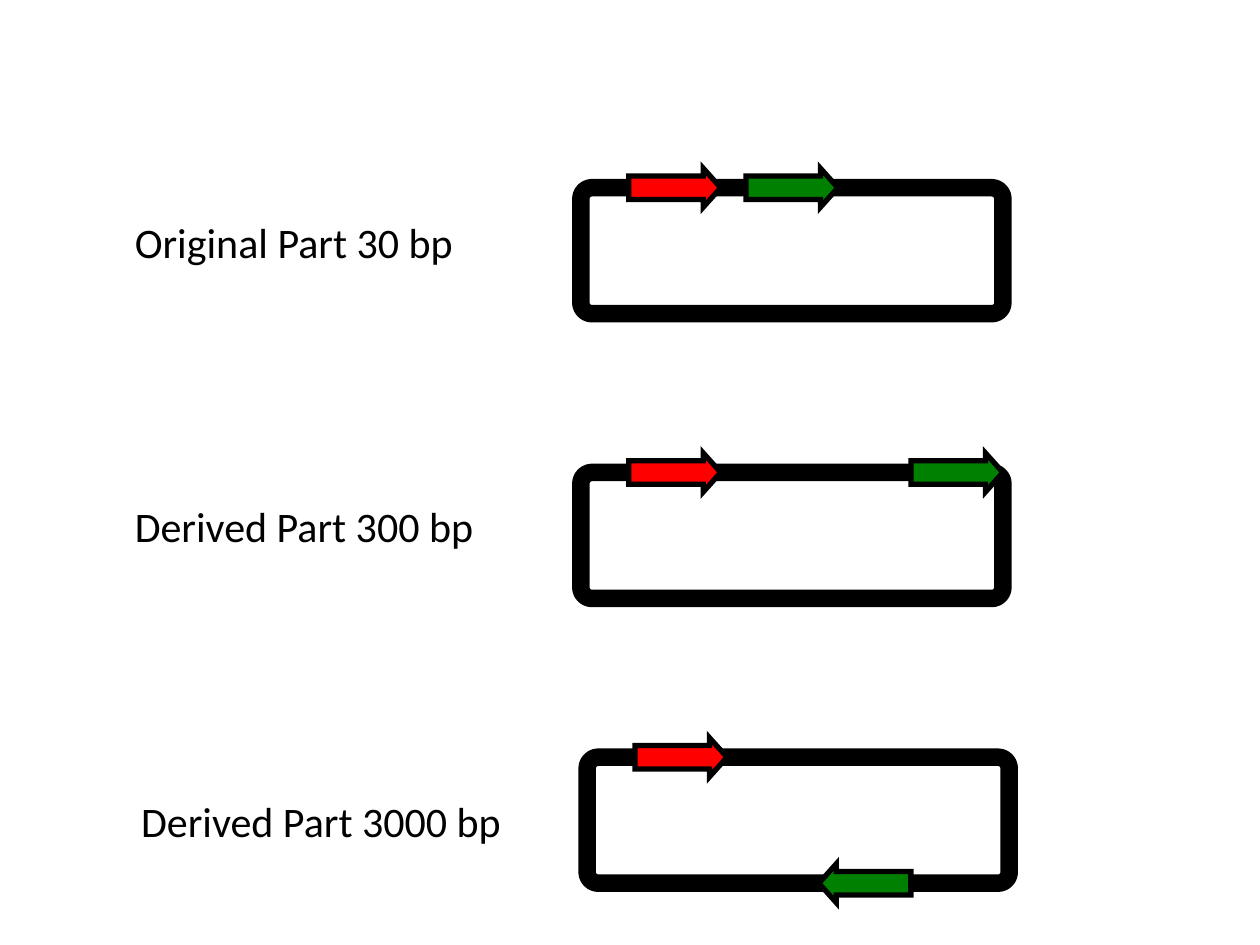
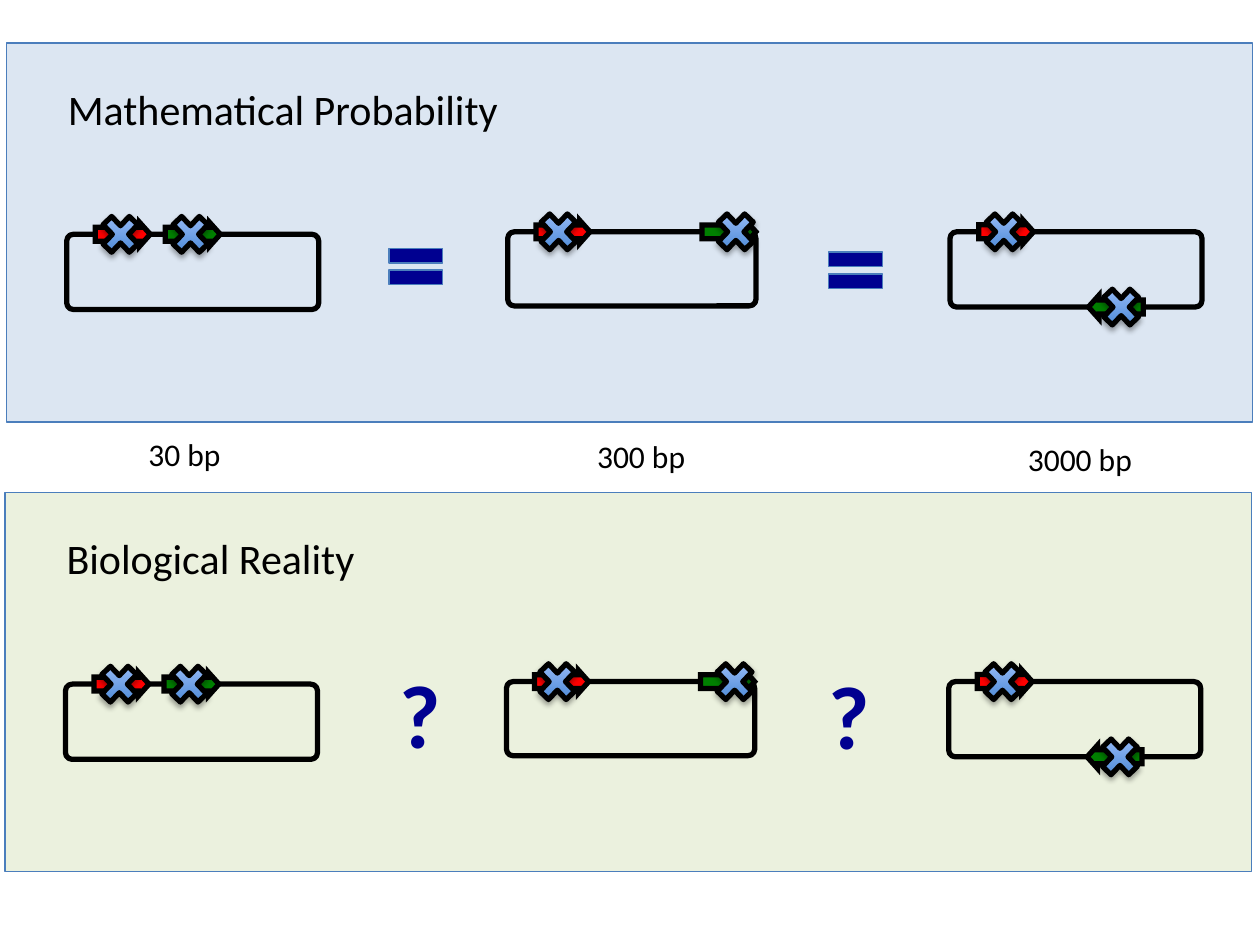
from dataclasses import dataclass

from lxml.etree import SubElement
from pptx import Presentation
from pptx.dml.color import RGBColor
from pptx.enum.shapes import MSO_SHAPE
from pptx.enum.text import MSO_ANCHOR
from pptx.oxml.ns import qn
from pptx.util import Inches, Pt


@dataclass(frozen=True)
class Theme:
    font: str = "Calibri"
    ink: str = "000000"
    red: str = "FF0000"
    green: str = "008000"
    navy: str = "000090"
    edge: str = "4B7EBC"
    mark: tuple = ("3F80CE", "A4C4FF")
    label: int = 24
    small: int = 18
    symbol: int = 51
    thin: float = 0.75
    line: int = 3
    ring: int = 10


T = Theme()
SLIDE = (10, 7.5)

# Plasmid geometry at full scale, relative to the ring's top left corner
RING = (3.35, 1)
ARROW = (0.73, 0.31)
RED_X = 0.38
MARK = (0.4, 0.42)

# Second part: x along the ring, whether it sits reversed on the lower strand
VARIANTS = {
    "30 bp": {"green_x": 1.31, "reverse": False},
    "300 bp": {"green_x": 2.62, "reverse": False},
    "3000 bp": {"green_x": 1.84, "reverse": True},
}

# Slide 1: label, variant, ring corner, label box (offset from ring, width)
PARTS = [
    ("Original Part", "30 bp", (4.61, 1.49), 0.07, 2.72),
    ("Derived Part", "300 bp", (4.61, 3.75), 0.07, 3.34),
    ("Derived Part", "3000 bp", (4.66, 6.01), 0.15, 3.34),
]
LABEL_DX, LABEL_H = -3.54, 0.71

# Slide 2: ring corner in the panel, ring width, mark shifts from both arrows
COLUMNS = [
    ("30 bp", (0.48, 1.52), 2, (0, 0)),
    ("300 bp", (3.98, 1.5), 1.97, (-0.02, 0.07)),
    ("3000 bp", (7.49, 1.5), 2, (0, 0.06)),
]
PANEL = (9.89, 3.01)
PANELS = [
    {"title": "Mathematical Probability", "at": (0.05, 0.34), "fill": "DCE6F2",
     "relation": "=", "relations": [(2.96, 1.53), (6.45, 1.56)]},
    {"title": "Biological Reality", "at": (0.04, 3.91), "fill": "EBF1DE",
     "relation": "?", "relations": [(3.03, 1.27), (6.44, 1.28)]},
]
SCALE_LABELS_X = (1.08, 4.64, 8.06)


def rgb(color):
    return RGBColor.from_string(color)


def shape(shapes, kind, x, y, size, fill=None, line=T.ink, width=T.line, adj=()):
    sp = shapes.add_shape(kind, *map(Inches, (x, y, *size)))
    sp.shadow.inherit = False
    if fill:
        sp.fill.solid()
        sp.fill.fore_color.rgb = rgb(fill)
    else:
        sp.fill.background()
    sp.line.color.rgb = rgb(line)
    sp.line.width = Pt(width)
    for i, value in enumerate(adj):
        sp.adjustments[i] = value
    return sp


def text(shapes, words, x, y, size, points=T.label, color=T.ink, bold=False, **frame):
    tf = shapes.add_textbox(*map(Inches, (x, y, *size))).text_frame
    for name, value in {"word_wrap": True, **frame}.items():
        setattr(tf, name, value)
    r = tf.paragraphs[0].add_run()
    r.text = words
    for name, value in {"name": T.font, "size": Pt(points), "bold": bold}.items():
        setattr(r.font, name, value)
    r.font.color.rgb = rgb(color)


def arrow(shapes, x, y, scale, fill, reverse=False):
    """Block arrow centred on the strand at height y."""
    w, h = (side * scale for side in ARROW)
    sp = shape(shapes, MSO_SHAPE.RIGHT_ARROW, x, y - h / 2, (w, h), fill, adj=(0.6, 0.447))
    SubElement(sp.line._get_or_add_ln(), qn("a:miter"), lim="800000")
    if reverse:
        sp._element.spPr.find(qn("a:xfrm")).set("flipH", "1")


def mark(shapes, x, y):
    """Gradient cross with a soft shadow, centred on the strand at height y."""
    sp = shape(shapes, MSO_SHAPE.MATH_MULTIPLY, x, y - MARK[1] / 2, MARK)
    sp.fill.gradient()
    sp.fill.gradient_angle = 90
    for stop, color in zip(sp.fill.gradient_stops, T.mark):
        stop.color.rgb = rgb(color)
    effects = sp._element.spPr.find(qn("a:effectLst"))
    shadow = SubElement(effects, qn("a:outerShdw"), blurRad=str(Pt(3.1)),
                        dist=str(Pt(1.8)), dir="5400000", rotWithShape="0")
    color = SubElement(shadow, qn("a:srgbClr"), val=T.ink)
    SubElement(color, qn("a:alpha"), val="35000")


def plasmid(slide, variant, x, y, width=RING[0], line=T.line, shifts=()):
    """Ring with its two arrows, and a cross on each when shifts are given."""
    shapes = slide.shapes.add_group_shape().shapes
    part = VARIANTS[variant]
    scale = width / RING[0]
    height = RING[1] * scale
    shape(shapes, MSO_SHAPE.ROUNDED_RECTANGLE, x, y, (width, height), width=line, adj=(0.088,))
    red = (x + RED_X * scale, y)
    green = (x + part["green_x"] * scale, y + height * part["reverse"])
    arrow(shapes, *green, scale, T.green, part["reverse"])
    arrow(shapes, *red, scale, T.red)
    for (ax, ay), shift in zip((red, green), shifts):
        mark(shapes, ax + shift, ay)
    return shapes


def parts_slide(slide):
    margins = {f"margin_{side}": 0 for side in ("left", "top", "right", "bottom")}
    for name, variant, (x, y), dy, width in PARTS:
        shapes = plasmid(slide, variant, x, y, line=T.ring)
        text(shapes, f"{name} {variant}", x + LABEL_DX, y + dy, (width, LABEL_H),
             vertical_anchor=MSO_ANCHOR.MIDDLE, **margins)


def comparison_slide(slide):
    shapes = slide.shapes
    for panel in PANELS:
        left, top = panel["at"]
        shape(shapes, MSO_SHAPE.RECTANGLE, left, top, PANEL, panel["fill"], T.edge, T.thin)
        for variant, (x, y), width, shifts in COLUMNS:
            plasmid(slide, variant, left + x, top + y, width, shifts=shifts)
        text(shapes, panel["title"], left + 0.39, top + 0.27, (5.83, 0.5))
        for x, y in panel["relations"]:
            if panel["relation"] == "=":
                shape(shapes, MSO_SHAPE.MATH_EQUAL, left + x, top + y, (0.58, 0.49),
                      T.navy, T.edge, T.thin)
            else:
                text(shapes, panel["relation"], left + x, top + y, (0.58, 0.96),
                     T.symbol, T.navy, True, word_wrap=False)
    for i, (variant, x) in enumerate(zip(VARIANTS, SCALE_LABELS_X)):
        text(shapes, variant, x, 3.4 + 0.02 * i, (0.78 + 0.13 * i, 0.4), T.small,
             word_wrap=False)


def main():
    prs = Presentation()
    prs.slide_width, prs.slide_height = map(Inches, SLIDE)
    blank = prs.slide_layouts[6]
    for build in (parts_slide, comparison_slide):
        build(prs.slides.add_slide(blank))
    prs.save("out.pptx")


if __name__ == "__main__":
    main()
